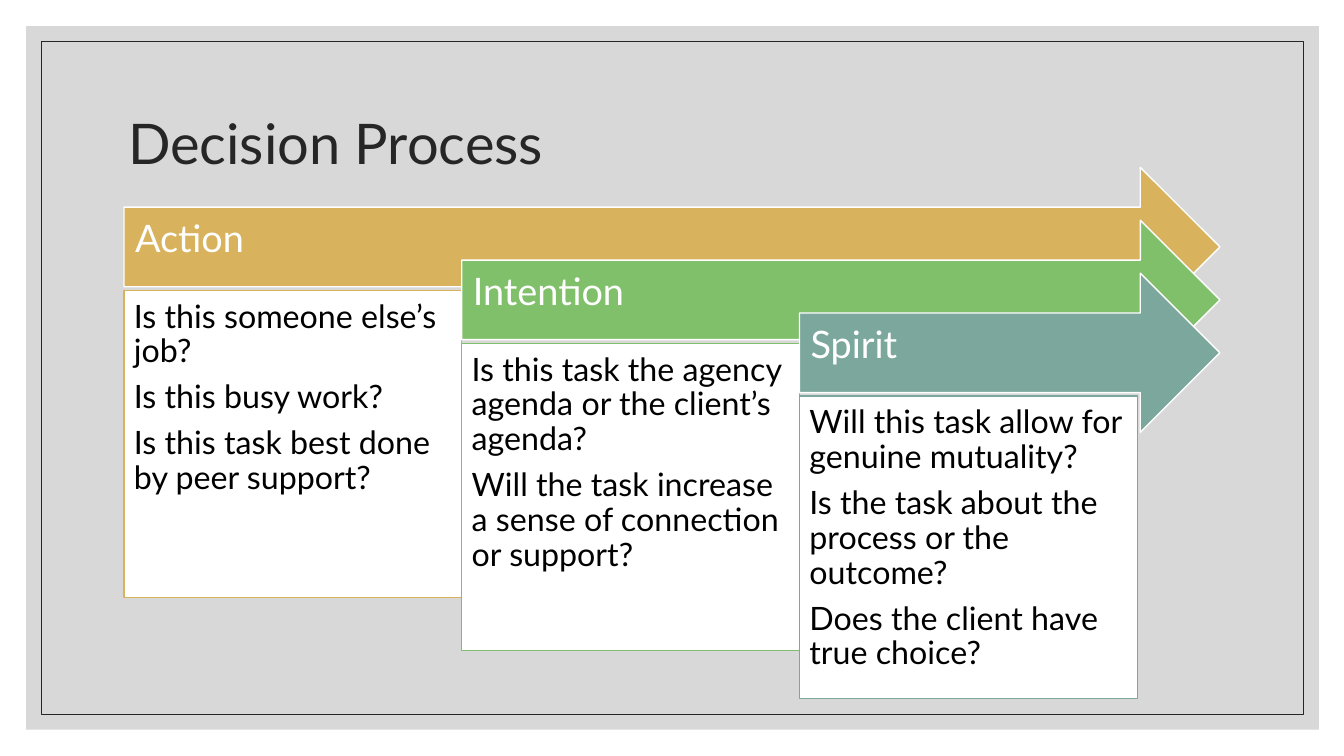
from pptx import Presentation
from pptx.dml.color import RGBColor
from pptx.enum.shapes import MSO_SHAPE
from pptx.enum.text import MSO_ANCHOR, PP_ALIGN
from pptx.oxml.ns import qn
from pptx.util import Inches, Pt
from lxml import etree

RECT, ARROW = MSO_SHAPE.RECTANGLE, MSO_SHAPE.RIGHT_ARROW
TOP, MIDDLE = MSO_ANCHOR.TOP, MSO_ANCHOR.MIDDLE
LEFT = PP_ALIGN.LEFT

COLORS = {
    "panel": "BFBFBF", "dark": "262626", "white": "FFFFFF", "black": "000000",
    "gold": "D8B25C", "green": "81C06B", "teal": "7BA79D",
}
STEPS = [
    ("Action", "gold", 3.05, [
        "Is this someone else’s job?",
        "Is this busy work?",
        "Is this task best done by peer support?",
    ]),
    ("Intention", "green", 3.05, [
        "Is this task the agency agenda or the client’s agenda?",
        "Will the task increase a sense of connection or support?",
    ]),
    ("Spirit", "teal", 3, [
        "Will this task allow for genuine mutuality?",
        "Is the task about the process or the outcome?",
        "Does the client have true choice?",
    ]),
]


class Deck:
    """Draws styled elements on the current slide."""

    def __init__(self, font):
        self.font = font
        self.prs = Presentation()
        self.prs.slide_width = Inches(13.33)
        self.prs.slide_height = Inches(7.5)
        self.slide = self.prs.slides.add_slide(self.prs.slide_layouts[5])

    def color(self, name):
        return RGBColor.from_string(COLORS[name])

    def shape(self, kind, box, fill=None, line=None, width=1, alpha=None):
        item = self.slide.shapes.add_shape(kind, *map(Inches, box))
        item.shadow.inherit = False
        if fill:
            item.fill.solid()
            item.fill.fore_color.rgb = self.color(fill)
        else:
            item.fill.background()
        if alpha:
            tint = item.fill._xPr.find(".//" + qn("a:srgbClr"))
            etree.SubElement(tint, qn("a:alpha")).set("val", str(alpha * 1000))
        if line:
            item.line.color.rgb = self.color(line)
            item.line.width = Pt(width)
        else:
            item.line.fill.background()
        return item

    def text(self, item, lines, size, color, anchor, pads, gap=0):
        frame = item.text_frame
        frame.word_wrap = True
        frame.vertical_anchor = anchor
        (frame.margin_left, frame.margin_top,
         frame.margin_right, frame.margin_bottom) = map(Inches, pads)
        for i, line in enumerate(lines):
            para = frame.add_paragraph() if i else frame.paragraphs[0]
            para.alignment = LEFT
            para.line_spacing = 0.9
            para.space_after = Pt(gap)
            run = para.add_run()
            run.text = line
            run.font.name = self.font
            run.font.size = Pt(size)
            run.font.color.rgb = self.color(color)

    def title(self, words, box):
        item = self.slide.shapes.title
        item.left, item.top, item.width, item.height = map(Inches, box)
        self.text(item, [words], 40, "dark", MIDDLE, (0.1, 0.05, 0.1, 0.05))
        self.slide.shapes._spTree.append(item._element)

    def step(self, index, name, color, height, lines):
        left, top = 1.23 + 3.35 * index, 1.66 + 0.525 * index
        arrow = self.shape(ARROW, (left, top, 12.1 - left, 1.58), color, "white")
        self.text(arrow, [name], 27, "white", MIDDLE, (0.11, 0.12, 0.27, 0.25))
        card = self.shape(RECT, (left, top + 1.22, 3.35, height), "white", color)
        self.text(card, lines, 23, "black", TOP, (0.1, 0.1, 0.1, 0.1), 8)


def main():
    deck = Deck("Lato")
    deck.shape(RECT, (0.26, 0.26, 12.82, 6.98), "panel", alpha=60)
    deck.shape(RECT, (0.41, 0.41, 12.52, 6.68), line="dark", width=0.5)
    deck.title("Decision Process", (1.17, 0.7, 11, 1.5))
    for index, step in enumerate(STEPS):
        deck.step(index, *step)
    deck.prs.save("out.pptx")


if __name__ == "__main__":
    main()
